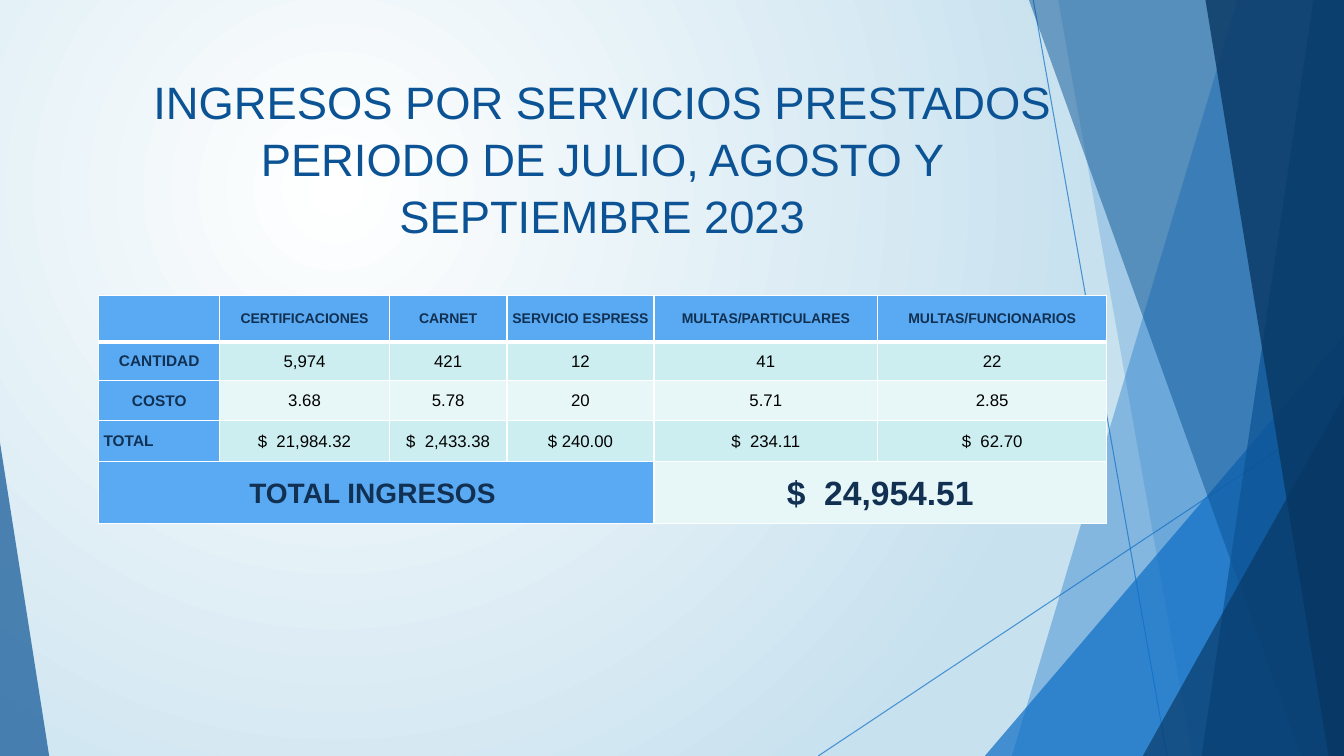
import pptx
import pptx.dml.color
import pptx.enum.shapes
import pptx.enum.text
import pptx.oxml
import pptx.oxml.ns
import pptx.util
from pptx.util import Cm

WIDTH, HEIGHT = 33.87, 19.05
BLUE, DEEP_BLUE, NAVY = "0F6FC6", "0B5394", "083763"
LABEL_FILL, LABEL_TEXT = "59AAF2", "113052"
BAND_DARK, BAND_LIGHT = "CCEEF1", "E7F7F8"
CENTER = pptx.enum.text.PP_ALIGN.CENTER
LEFT = pptx.enum.text.PP_ALIGN.LEFT

COLUMN_WIDTHS = [3.05, 4.27, 2.97, 3.7, 5.64, 5.77]
ROW_HEIGHTS = [1.17, 0.97, 1.02, 1.02, 1.57]
INCOME_ROWS = [
    ["", "CERTIFICACIONES", "CARNET", "SERVICIO ESPRESS",
     "MULTAS/PARTICULARES", "MULTAS/FUNCIONARIOS"],
    ["CANTIDAD", "5,974", "421", "12", "41", "22"],
    ["COSTO", "3.68", "5.78", "20", "5.71", "2.85"],
    ["TOTAL", "$  21,984.32", "$  2,433.38", "$ 240.00", "$  234.11", "$  62.70"],
]


def rgb(value):
    return pptx.dml.color.RGBColor.from_string(value)


def xml_child(parent, tag, **attributes):
    child = parent.makeelement(pptx.oxml.ns.qn(tag), attributes)
    parent.append(child)
    return child


def set_alpha(element, percent):
    for color in element.iter(pptx.oxml.ns.qn("a:srgbClr")):
        xml_child(color, "a:alpha", val=str(percent * 1000))


def write_text(frame, text, size, color, bold=False, align=CENTER, spacing=1.0):
    paragraph = frame.paragraphs[0]
    paragraph.text = text
    paragraph.alignment = align
    paragraph.line_spacing = spacing
    for run in paragraph.runs:
        run.font.name = "Arial"
        run.font.size = pptx.util.Pt(size)
        run.font.bold = bold
        run.font.color.rgb = rgb(color)


def paint(shape, color, alpha):
    shape.shadow.inherit = False
    shape.fill.solid()
    shape.fill.fore_color.rgb = rgb(color)
    shape.line.fill.background()
    set_alpha(shape.element.spPr, alpha)


def add_band(slide, top_x, bottom_x, color, alpha):
    """Full-height facet between a slanted edge and the right side."""
    builder = slide.shapes.build_freeform(Cm(top_x), 0)
    builder.add_line_segments([(Cm(WIDTH), 0), (Cm(WIDTH), Cm(HEIGHT)),
                               (Cm(bottom_x), Cm(HEIGHT))])
    paint(builder.convert_to_shape(), color, alpha)


def add_corner(slide, left, top, width, apex, color, alpha):
    """Right triangle standing on the bottom edge; apex is 0 left, 1 right."""
    triangle = slide.shapes.add_shape(
        pptx.enum.shapes.MSO_SHAPE.ISOSCELES_TRIANGLE,
        Cm(left), Cm(top), Cm(width), Cm(HEIGHT - top))
    triangle.adjustments[0] = apex
    paint(triangle, color, alpha)


def add_thin_line(slide, x1, y1, x2, y2):
    line = slide.shapes.add_connector(
        pptx.enum.shapes.MSO_CONNECTOR.STRAIGHT, Cm(x1), Cm(y1), Cm(x2), Cm(y2))
    line.line.color.rgb = rgb(BLUE)
    line.line.width = pptx.util.Pt(0.75)
    set_alpha(line.element.spPr, 70)
    xml_child(line.element.spPr, "a:effectLst")


def add_background(slide):
    fill = slide.background.fill
    fill.gradient()
    for stop, color in zip(fill.gradient_stops, ["FFFFFF", "C7E1EE"]):
        stop.color.rgb = rgb(color)
    gradient = slide.element.find(".//" + pptx.oxml.ns.qn("a:gradFill"))
    gradient.remove(gradient.find(pptx.oxml.ns.qn("a:lin")))
    circle = xml_child(gradient, "a:path", path="circle")
    xml_child(circle, "a:fillToRect", l="50000", t="50000", r="100000", b="100000")


def add_facets(slide):
    add_thin_line(slide, 26.04, 0, 29.41, HEIGHT)
    add_thin_line(slide, WIDTH, 10.24, 20.62, HEIGHT)
    add_band(slide, 31.19, 25.5, BLUE, 36)
    add_band(slide, 26.67, 30.05, BLUE, 20)
    add_corner(slide, 24.82, 8.46, 9.05, 1, BLUE, 72)
    add_band(slide, 25.93, 32.79, DEEP_BLUE, 50)
    add_band(slide, 33.1, 30.28, DEEP_BLUE, 70)
    add_band(slide, 30.38, 33.48, NAVY, 80)
    add_corner(slide, 28.8, 9.98, 5.07, 1, NAVY, 66)
    add_corner(slide, 0, 11.15, 1.24, 0, DEEP_BLUE, 70)


def add_title(slide):
    box = slide.shapes.add_textbox(Cm(3), Cm(1.7), Cm(24.36), Cm(4.22))
    box.text_frame.word_wrap = True
    write_text(box.text_frame,
               "INGRESOS POR SERVICIOS PRESTADOS\v"
               "PERIODO DE JULIO, AGOSTO Y SEPTIEMBRE 2023",
               size=32.4, color=DEEP_BLUE, spacing=1.04)


def format_cell(cell, fill, top_width=1, bottom_width=1):
    properties = cell._tc.get_or_add_tcPr()
    widths = {"a:lnL": 1, "a:lnR": 1, "a:lnT": top_width, "a:lnB": bottom_width}
    for tag, width in widths.items():
        border = xml_child(properties, tag, w=str(pptx.util.Pt(width)))
        xml_child(xml_child(border, "a:solidFill"), "a:srgbClr", val="FFFFFF")
    cell.fill.solid()
    cell.fill.fore_color.rgb = rgb(fill)
    cell.vertical_anchor = pptx.enum.text.MSO_ANCHOR.MIDDLE
    cell.margin_left = cell.margin_right = Cm(0.12)
    cell.margin_top = cell.margin_bottom = 0


def add_income_table(slide):
    table = slide.shapes.add_table(
        len(ROW_HEIGHTS), len(COLUMN_WIDTHS), Cm(2.49), Cm(7.44),
        Cm(sum(COLUMN_WIDTHS)), Cm(sum(ROW_HEIGHTS))).table
    for column, width in zip(table.columns, COLUMN_WIDTHS):
        column.width = Cm(width)
    for row, height in zip(table.rows, ROW_HEIGHTS):
        row.height = Cm(height)

    # Header, quantities, costs and totals
    for row, texts in enumerate(INCOME_ROWS):
        for column, text in enumerate(texts):
            cell = table.cell(row, column)
            is_label = row == 0 or column == 0
            band = BAND_DARK if row % 2 else BAND_LIGHT
            format_cell(cell, LABEL_FILL if is_label else band,
                        top_width=3 if row == 1 else 1,
                        bottom_width=3 if row == 0 else 1)
            size = 10 if row == 0 else 11 if column == 0 else 12
            write_text(cell.text_frame, text, size=size, bold=is_label,
                       color=LABEL_TEXT if is_label else "000000",
                       align=LEFT if text == "TOTAL" else CENTER, spacing=1.07)

    # Grand total across merged cells
    last = len(INCOME_ROWS)
    for first, end, text, size, fill in [
            (0, 3, "TOTAL INGRESOS ", 20, LABEL_FILL),
            (4, 5, "$  24,954.51", 24, BAND_LIGHT)]:
        for column in range(first, end + 1):
            format_cell(table.cell(last, column), fill)
        cell = table.cell(last, first)
        cell.merge(table.cell(last, end))
        write_text(cell.text_frame, text, size=size, color=LABEL_TEXT,
                   bold=True, spacing=1.07)


def main():
    presentation = pptx.Presentation()
    presentation.slide_width, presentation.slide_height = Cm(WIDTH), Cm(HEIGHT)
    slide = presentation.slides.add_slide(presentation.slide_layouts[6])
    add_background(slide)
    add_facets(slide)
    add_title(slide)
    add_income_table(slide)
    presentation.save("out.pptx")


if __name__ == "__main__":
    main()
